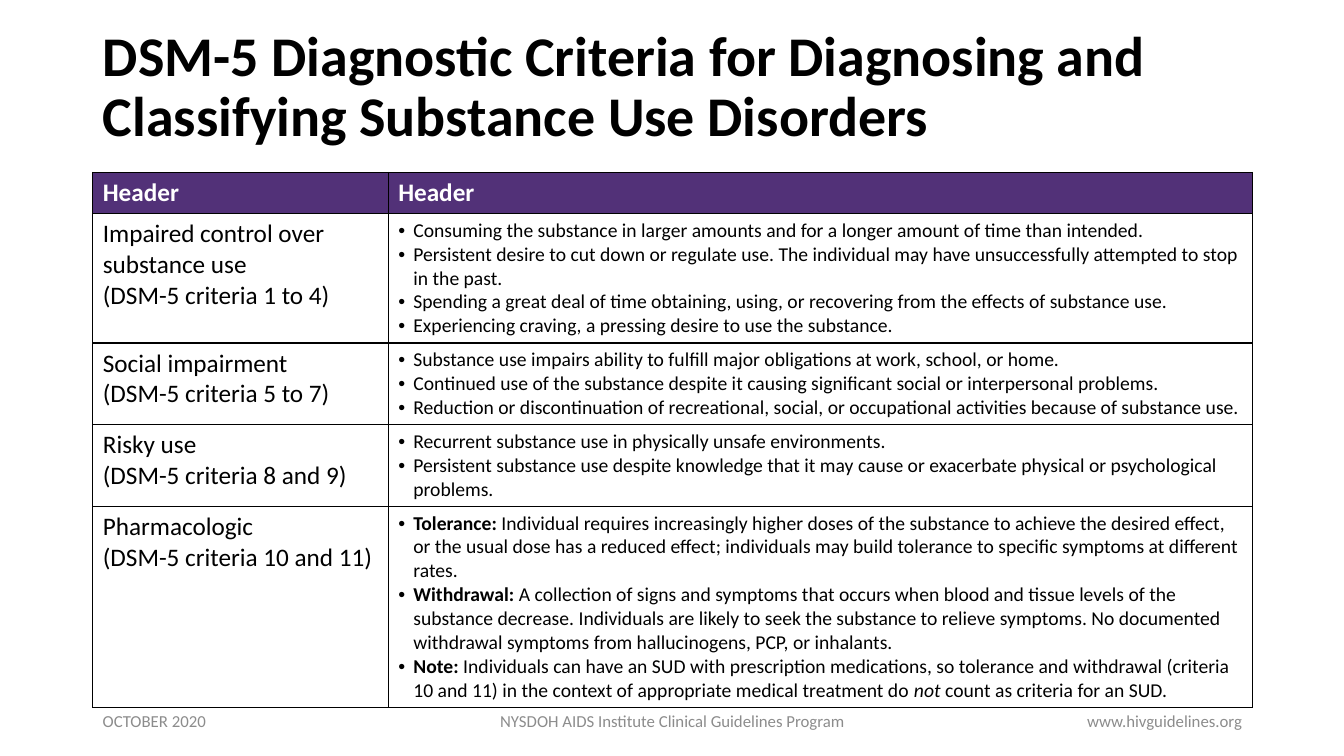
import pptx
import pptx.dml.color
import pptx.enum.text
import pptx.oxml
import pptx.oxml.ns
import pptx.util
from pptx.util import Inches

RGBColor = pptx.dml.color.RGBColor
PP_ALIGN = pptx.enum.text.PP_ALIGN
MIDDLE = pptx.enum.text.MSO_ANCHOR.MIDDLE

BLACK = RGBColor(0x00, 0x00, 0x00)
WHITE = RGBColor(0xFF, 0xFF, 0xFF)
PURPLE = RGBColor(0x52, 0x31, 0x78)
GRAY = RGBColor(0x8C, 0x8C, 0x8C)

LEFT, WIDTH = 0.92, 11.5
BOLD, ITALIC = {"bold": True}, {"italic": True}

HEADERS = ["Header", "Header"]
# Each criteria group: label lines, then bullets; a bullet is a list of (text, format) runs.
CRITERIA = [
    (["Impaired control over substance use", "(DSM-5 criteria 1 to 4)"], [
        [("Consuming the substance in larger amounts and for a longer amount of time than intended.", {})],
        [("Persistent desire to cut down or regulate use. The individual may have unsuccessfully "
          "attempted to stop in the past.", {})],
        [("Spending a great deal of time obtaining, using, or recovering from the effects of "
          "substance use.", {})],
        [("Experiencing craving, a pressing desire to use the substance.", {})],
    ]),
    (["Social impairment", "(DSM-5 criteria 5 to 7)"], [
        [("Substance use impairs ability to fulfill major obligations at work, school, or home.", {})],
        [("Continued use of the substance despite it causing significant social or interpersonal "
          "problems.", {})],
        [("Reduction or discontinuation of recreational, social, or occupational activities because "
          "of substance use.", {})],
    ]),
    (["Risky use", "(DSM-5 criteria 8 and 9)"], [
        [("Recurrent substance use in physically unsafe environments.", {})],
        [("Persistent substance use despite knowledge that it may cause or exacerbate physical or "
          "psychological problems.", {})],
    ]),
    (["Pharmacologic", "(DSM-5 criteria 10 and 11)"], [
        [("Tolerance:", BOLD),
         (" Individual requires increasingly higher doses of the substance to achieve the desired "
          "effect, or the usual dose has a reduced effect; individuals may build tolerance to "
          "specific symptoms at different rates.", {})],
        [("Withdrawal:", BOLD),
         (" A collection of signs and symptoms that occurs when blood and tissue levels of the "
          "substance decrease. Individuals are likely to seek the substance to relieve symptoms. "
          "No documented withdrawal symptoms from hallucinogens, PCP, or inhalants.", {})],
        [("Note:", BOLD),
         (" Individuals can have an SUD with prescription medications, so tolerance and withdrawal "
          "(criteria 10 and 11) in the context of appropriate medical treatment do ", {}),
         ("not", ITALIC),
         (" count as criteria for an SUD.", {})],
    ]),
]
FOOTERS = [
    ("OCTOBER 2020", LEFT, 3, PP_ALIGN.LEFT),
    ("NYSDOH AIDS Institute Clinical Guidelines Program", 4.42, 4.5, PP_ALIGN.CENTER),
    ("www.hivguidelines.org", 9.42, 3, PP_ALIGN.RIGHT),
]


def add_run(paragraph, text, size, color, **styles):
    run = paragraph.add_run()
    run.text = text
    values = {"name": "Calibri", "size": pptx.util.Pt(size), "bold": False, "italic": False, **styles}
    for attribute, value in values.items():
        setattr(run.font, attribute, value)
    run.font.color.rgb = color


def fill_cell(cell, paragraphs, size, color, bulleted=False):
    """Write paragraphs of (text, format) runs and draw the cell's black borders."""
    text_frame = cell.text_frame
    for index, runs in enumerate(paragraphs):
        paragraph = text_frame.add_paragraph() if index else text_frame.paragraphs[0]
        if bulleted:
            properties = paragraph._p.get_or_add_pPr()
            properties.set("marL", str(Inches(0.15)))
            properties.set("indent", str(Inches(-0.15)))
            for tag in ('a:buFont {} typeface="Arial"', 'a:buChar {} char="•"'):
                properties.append(pptx.oxml.parse_xml(f"<{tag.format(pptx.oxml.ns.nsdecls('a'))}/>"))
        for text, styles in runs:
            add_run(paragraph, text, size, color, **styles)
    for side in "LRTB":
        cell._tc.get_or_add_tcPr().append(pptx.oxml.parse_xml(
            f'<a:ln{side} {pptx.oxml.ns.nsdecls("a")} w="12700">'
            f'<a:solidFill><a:srgbClr val="{BLACK}"/></a:solidFill></a:ln{side}>'))


presentation = pptx.Presentation()
presentation.slide_width = Inches(13.33)
presentation.slide_height = Inches(7.5)
slide = presentation.slides.add_slide(presentation.slide_layouts[5])

title = slide.shapes.title
title.left, title.top, title.width, title.height = map(Inches, (LEFT, 0.15, 10.63, 1.45))
title.text_frame.vertical_anchor = MIDDLE
title_paragraph = title.text_frame.paragraphs[0]
title_paragraph.alignment = PP_ALIGN.LEFT
title_paragraph.line_spacing = 0.9
add_run(title_paragraph, "DSM-5 Diagnostic Criteria for Diagnosing and Classifying Substance Use Disorders",
        40, BLACK, bold=True)

table_shape = slide.shapes.add_table(len(CRITERIA) + 1, 2, Inches(LEFT), Inches(1.71),
                                     Inches(WIDTH), Inches(5.24))
table = table_shape.table
table.horz_banding = False
for column, width in zip(table.columns, (2.93, 8.57)):
    column.width = Inches(width)
# Rows start at one line high and grow with their text.
for row in table.rows:
    row.height = Inches(0.41)
table_shape.height = Inches(5.24)

for column_index, header in enumerate(HEADERS):
    cell = table.cell(0, column_index)
    fill_cell(cell, [[(header, BOLD)]], 18, WHITE)
    cell.fill.solid()
    cell.fill.fore_color.rgb = PURPLE

for row_index, (labels, bullets) in enumerate(CRITERIA, start=1):
    label_cell, bullet_cell = table.rows[row_index].cells
    fill_cell(label_cell, [[(label, {})] for label in labels], 18, BLACK)
    fill_cell(bullet_cell, bullets, 14, BLACK, bulleted=True)
    for cell in (label_cell, bullet_cell):
        cell.fill.background()

for text, left, width, alignment in FOOTERS:
    footer = slide.shapes.add_textbox(Inches(left), Inches(6.95), Inches(width), Inches(0.4))
    footer.text_frame.word_wrap = True
    footer.text_frame.vertical_anchor = MIDDLE
    paragraph = footer.text_frame.paragraphs[0]
    paragraph.alignment = alignment
    add_run(paragraph, text, 12, GRAY)

presentation.save("out.pptx")
